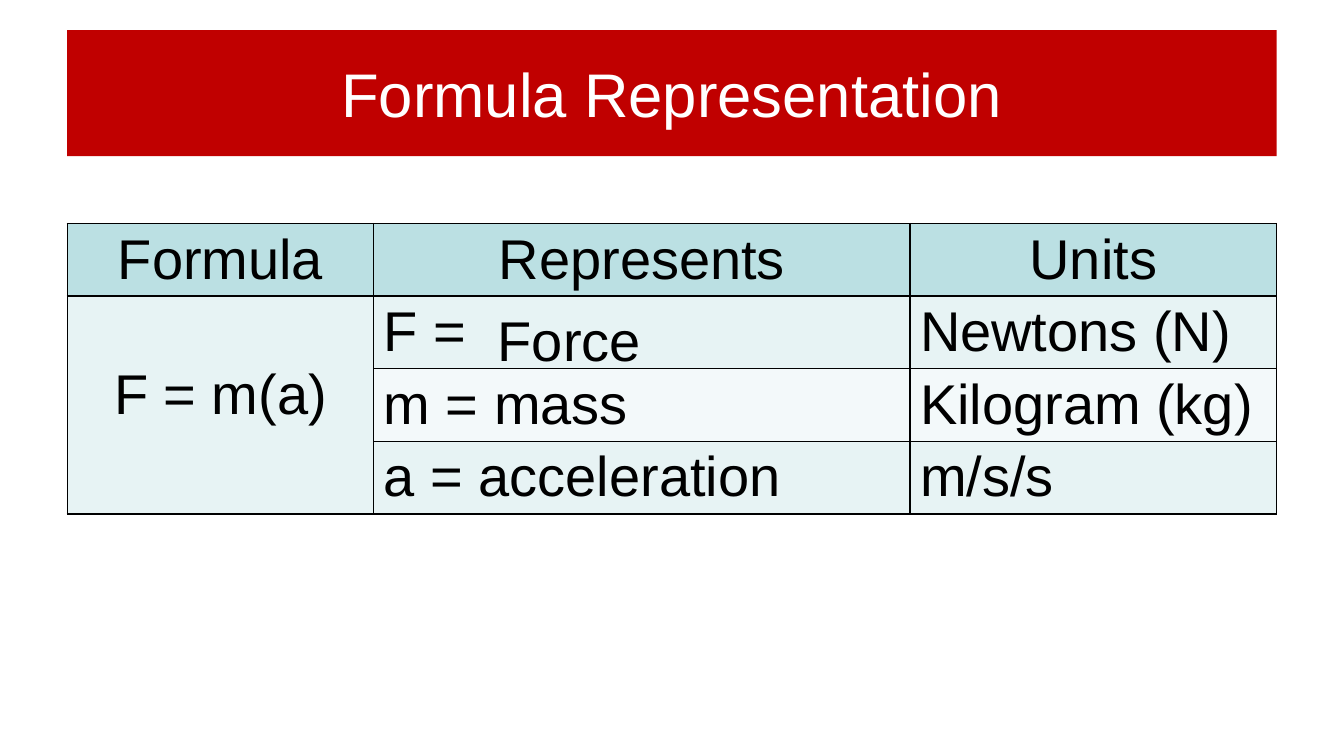
import pptx
import pptx.util
import pptx.dml.color
import pptx.enum.shapes
import pptx.enum.text
import pptx.oxml

Pt = pptx.util.Pt
RGB = pptx.dml.color.RGBColor.from_string
ALIGN = pptx.enum.text.PP_ALIGN
ANCHOR = pptx.enum.text.MSO_ANCHOR
NS = "http://schemas.openxmlformats.org/drawingml/2006/main"
COLORS = {"red": "C00000", "white": "FFFFFF", "black": "000000",
          "head": "BBE0E3", "band": "E7F3F4", "pale": "F3F9FA"}


def write(text, frame, size=40, color="black", align=ALIGN.LEFT):
    frame.word_wrap = True
    para = frame.paragraphs[0]
    para.alignment = align
    run = para.add_run()
    run.text = text
    run.font.name = "Arial"
    run.font.size = Pt(size)
    run.font.color.rgb = RGB(COLORS[color])


deck = pptx.Presentation()
deck.slide_width = Pt(960)
deck.slide_height = Pt(540)
slide = deck.slides.add_slide(deck.slide_layouts[6])

title = slide.shapes.add_shape(
    pptx.enum.shapes.MSO_SHAPE.RECTANGLE, Pt(48), Pt(21.6), Pt(864), Pt(90))
title.shadow.inherit = False
title.fill.solid()
title.fill.fore_color.rgb = RGB(COLORS["red"])
title.line.fill.background()
title.text_frame.vertical_anchor = ANCHOR.MIDDLE
write("Formula Representation", title.text_frame, size=44,
      color="white", align=ALIGN.CENTER)

rows = [
    ("head", ["Formula", "Represents", "Units"]),
    ("band", ["F = m(a)", "F =", "Newtons (N)"]),
    ("pale", ["", "m = mass", "Kilogram (kg)"]),
    ("band", ["", "a = acceleration", "m/s/s"]),
]
high = 51.88
table = slide.shapes.add_table(
    4, 3, Pt(48), Pt(159.6), Pt(864), Pt(4 * high)).table
for col, width in zip(table.columns, [219, 383, 262]):
    col.width = Pt(width)
for row in table.rows:
    row.height = Pt(high)

for r, (fill, texts) in enumerate(rows):
    for c, text in enumerate(texts):
        cell = table.cell(r, c)
        props = cell._tc.get_or_add_tcPr()
        for side in ("lnL", "lnR", "lnT", "lnB"):
            props.append(pptx.oxml.parse_xml(
                f'<a:{side} xmlns:a="{NS}" w="12700"><a:solidFill>'
                f'<a:srgbClr val="{COLORS["black"]}"/></a:solidFill></a:{side}>'))
        cell.fill.solid()
        cell.fill.fore_color.rgb = RGB(COLORS[fill])
        if text:
            center = r == 0 or c == 0
            write(text, cell.text_frame,
                  align=ALIGN.CENTER if center else ALIGN.LEFT)

law = table.cell(1, 0)
law.merge(table.cell(3, 0))
law.vertical_anchor = ANCHOR.MIDDLE
law.margin_bottom = Pt(18)

force = slide.shapes.add_textbox(Pt(348.5), Pt(214.6), Pt(287), Pt(55.4))
write("Force", force.text_frame)

deck.save("out.pptx")
